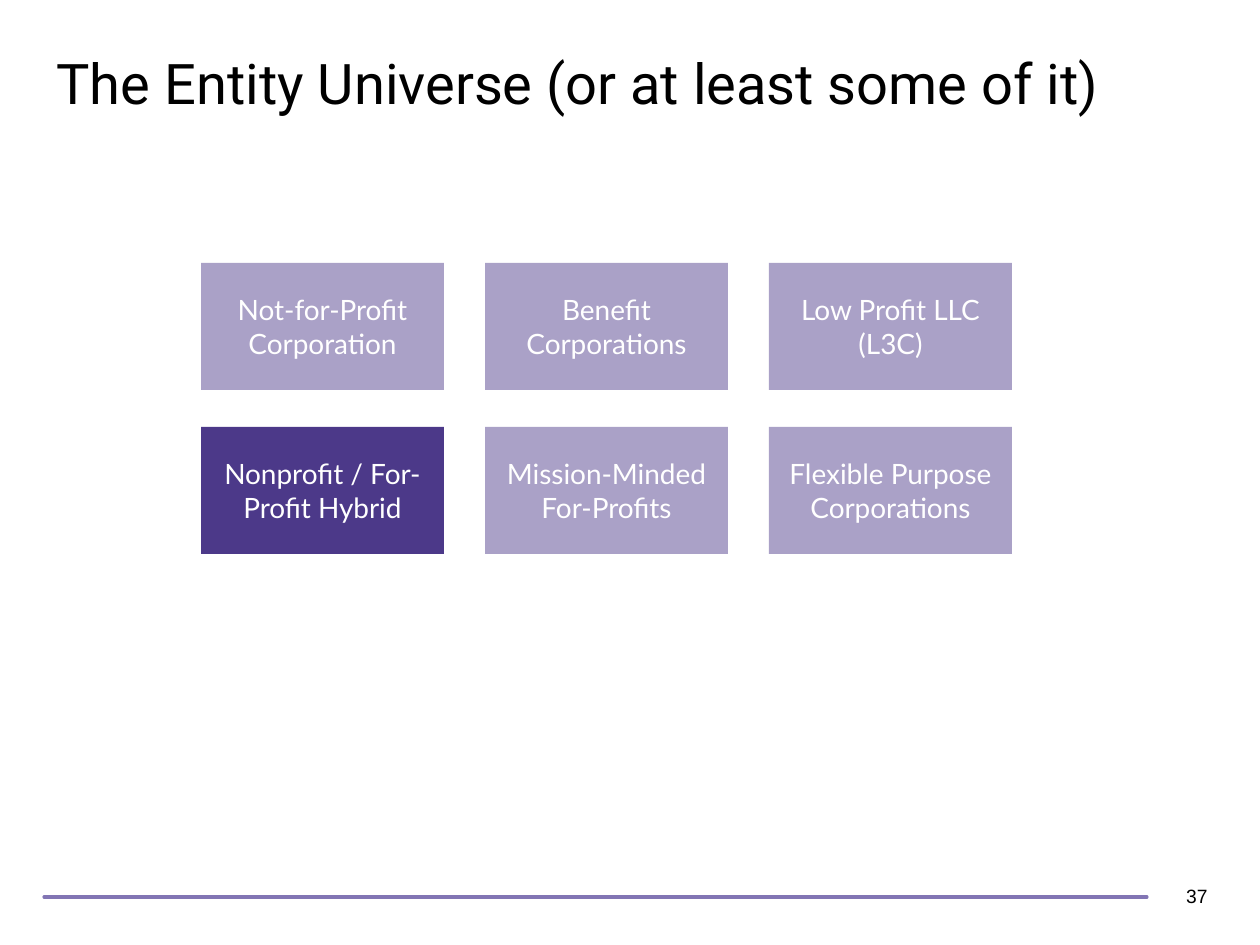
from lxml.etree import SubElement
from pptx import Presentation
from pptx.dml.color import RGBColor
from pptx.enum.shapes import MSO_CONNECTOR, MSO_SHAPE
from pptx.enum.text import MSO_ANCHOR, PP_ALIGN
from pptx.oxml.ns import qn
from pptx.util import Pt

# Content
TITLE = "The Entity Universe (or at least some of it)"
PAGE = "37"
ROWS = [
    ["Not-for-Profit Corporation", "Benefit Corporations", "Low Profit LLC (L3C)"],
    ["Nonprofit / For-Profit Hybrid", "Mission-Minded For-Profits",
     "Flexible Purpose Corporations"],
]
FOCUS = "Nonprofit / For-Profit Hybrid"

# Formats
BLACK = RGBColor(0x00, 0x00, 0x00)
WHITE = RGBColor(0xFF, 0xFF, 0xFF)
PURPLE = RGBColor(0x4C, 0x39, 0x89)
RULE = RGBColor(0x82, 0x75, 0xB4)
FADE = 47  # percent opacity of the boxes out of focus
HEAD = {"name": "Roboto", "size": Pt(32), "color": BLACK}
LABEL = {"name": "Lato", "size": Pt(16), "color": WHITE}
NUMBER = {"name": "Arial", "size": Pt(11), "color": BLACK}

# Grid in px
LEFT, TOP = 201, 263
WIDE, HIGH = 243, 127
STEP_X, STEP_Y = 284, 164


def px(*vals):
    return [round(val * 914400 / 126) for val in vals]


def write(shape, text, style, align, anchor):
    frame = shape.text_frame
    frame.word_wrap = True
    frame.vertical_anchor = anchor
    para = frame.paragraphs[0]
    para.alignment = align
    run = para.add_run()
    run.text = text
    for key, val in style.items():
        if key == "color":
            run.font.color.rgb = val
        else:
            setattr(run.font, key, val)
    return para


deck = Presentation()
deck.slide_width, deck.slide_height = px(1260, 945)
slide = deck.slides.add_slide(deck.slide_layouts[5])
shapes = slide.shapes

# Title
title = shapes.title
title.left, title.top, title.width, title.height = px(44, 50, 1177, 102)
write(title, TITLE, HEAD, PP_ALIGN.LEFT, MSO_ANCHOR.TOP).line_spacing = 0.9

# Footer rule and page number
rule = shapes.add_connector(MSO_CONNECTOR.STRAIGHT, *px(44, 897, 1147, 897))
rule.line.color.rgb = RULE
rule.line.width = Pt(1.75)
rule.line._get_or_add_ln().set("cap", "rnd")
SubElement(rule._element.spPr, qn("a:effectLst"))
page = shapes.add_textbox(*px(1116, 871, 104, 50))
write(page, PAGE, NUMBER, PP_ALIGN.RIGHT, MSO_ANCHOR.MIDDLE)

# Entity boxes
for row, names in enumerate(ROWS):
    for col, name in enumerate(names):
        box = shapes.add_shape(
            MSO_SHAPE.RECTANGLE,
            *px(LEFT + col * STEP_X, TOP + row * STEP_Y, WIDE, HIGH))
        box.shadow.inherit = False
        box.fill.solid()
        box.fill.fore_color.rgb = PURPLE
        box.line.fill.background()
        if name != FOCUS:
            tint = box._element.spPr.find(qn("a:solidFill"))[0]
            SubElement(tint, qn("a:alpha"), val=str(FADE * 1000))
        write(box, name, LABEL, PP_ALIGN.CENTER, MSO_ANCHOR.MIDDLE)

deck.save("out.pptx")
